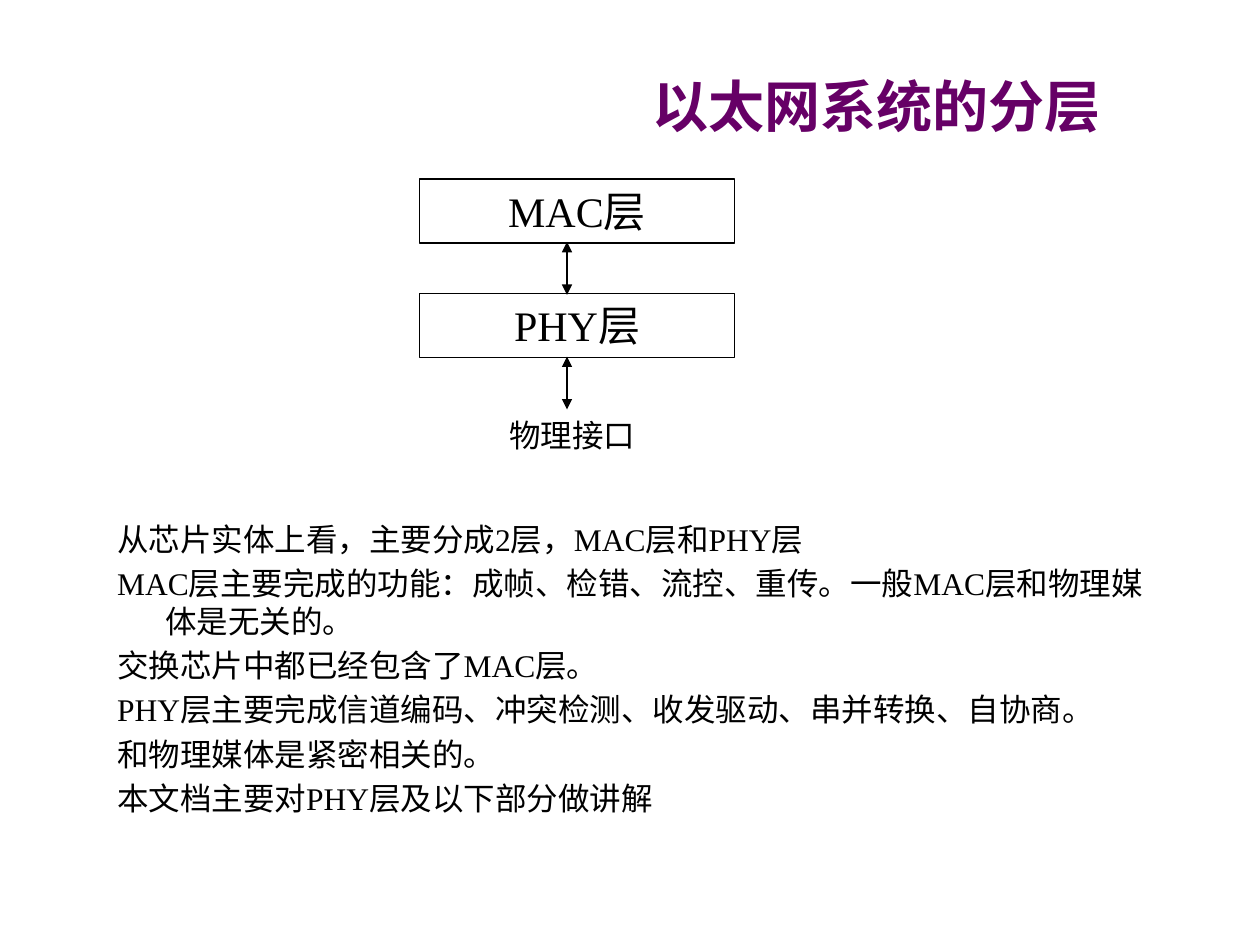
from pptx import Presentation
from pptx.dml.color import RGBColor
from pptx.enum.shapes import MSO_CONNECTOR, MSO_SHAPE
from pptx.enum.text import MSO_ANCHOR, MSO_AUTO_SIZE, PP_ALIGN
from pptx.oxml.ns import qn
from pptx.util import Inches, Pt
from lxml import etree

BLACK = RGBColor(0, 0, 0)
WHITE = RGBColor(255, 255, 255)
PURPLE = RGBColor(0x66, 0, 0x66)
RECT = MSO_SHAPE.RECTANGLE
LINE = MSO_CONNECTOR.STRAIGHT
CENTER, LEFT = PP_ALIGN.CENTER, PP_ALIGN.LEFT
MIDDLE, TOP = MSO_ANCHOR.MIDDLE, MSO_ANCHOR.TOP
FIXED = MSO_AUTO_SIZE.NONE
FONT = "Times New Roman"


def place(shape, left, top, width, height):
    shape.left, shape.top = Inches(left), Inches(top)
    shape.width, shape.height = Inches(width), Inches(height)


def style(frame, size, color=BLACK, bold=False, align=CENTER, anchor=TOP):
    frame.word_wrap = True
    frame.auto_size = FIXED
    frame.vertical_anchor = anchor
    for para in frame.paragraphs:
        para.alignment = align
        for run in para.runs:
            run.font.name = FONT
            run.font.size = Pt(size)
            run.font.bold = bold
            run.font.color.rgb = color


prs = Presentation()
prs.slide_width, prs.slide_height = Inches(10), Inches(7.5)
slide = prs.slides.add_slide(prs.slide_layouts[1])
shapes = slide.shapes

# Title
title = shapes.title
place(title, 4.33, 0.5, 5.25, 0.67)
title.fill.solid()
title.fill.fore_color.rgb = WHITE
title.text_frame.text = "以太网系统的分层"
style(title.text_frame, 32, PURPLE, bold=True, anchor=MIDDLE)

# Layer boxes, each with a two-way arrow below
for name, top in (("MAC层", 1.42), ("PHY层", 2.33)):
    box = shapes.add_shape(RECT, Inches(3.33), Inches(top), Inches(2.5), Inches(0.51))
    box.shadow.inherit = False
    box.fill.background()
    box.line.color.rgb = BLACK
    box.line.width = Pt(0.75)
    box.text_frame.text = name
    style(box.text_frame, 24)

    arrow = shapes.add_connector(
        LINE, Inches(4.5), Inches(top + 0.5), Inches(4.5), Inches(top + 0.92))
    arrow.line.color.rgb = BLACK
    arrow.line.width = Pt(1)
    for end in ("a:headEnd", "a:tailEnd"):
        etree.SubElement(arrow.line._get_or_add_ln(), qn(end), type="triangle")
    etree.SubElement(arrow._element.spPr, qn("a:effectLst"))

# Physical interface label
label = shapes.add_textbox(Inches(3.83), Inches(3.25), Inches(1.42), Inches(0.4))
label.text_frame.text = "物理接口"
style(label.text_frame, 18)

# Explanation with hanging indents
body = slide.placeholders[1]
place(body, 0.83, 4.08, 8.5, 2.83)
body.fill.solid()
body.fill.fore_color.rgb = WHITE
points = [
    "从芯片实体上看，主要分成2层，MAC层和PHY层",
    "MAC层主要完成的功能：成帧、检错、流控、重传。一般MAC层和物理媒体是无关的。",
    "交换芯片中都已经包含了MAC层。",
    "PHY层主要完成信道编码、冲突检测、收发驱动、串并转换、自协商。",
    "和物理媒体是紧密相关的。",
    "本文档主要对PHY层及以下部分做讲解",
]
frame = body.text_frame
for i, point in enumerate(points):
    para = frame.paragraphs[0] if i == 0 else frame.add_paragraph()
    para.text = point
    props = para._p.get_or_add_pPr()
    props.set("marL", str(Inches(0.38)))
    props.set("indent", str(-Inches(0.38)))
    etree.SubElement(props, qn("a:buNone"))
    para.space_before = Pt(3.6 if i else 0)
style(frame, 18, align=LEFT)

prs.save("out.pptx")
